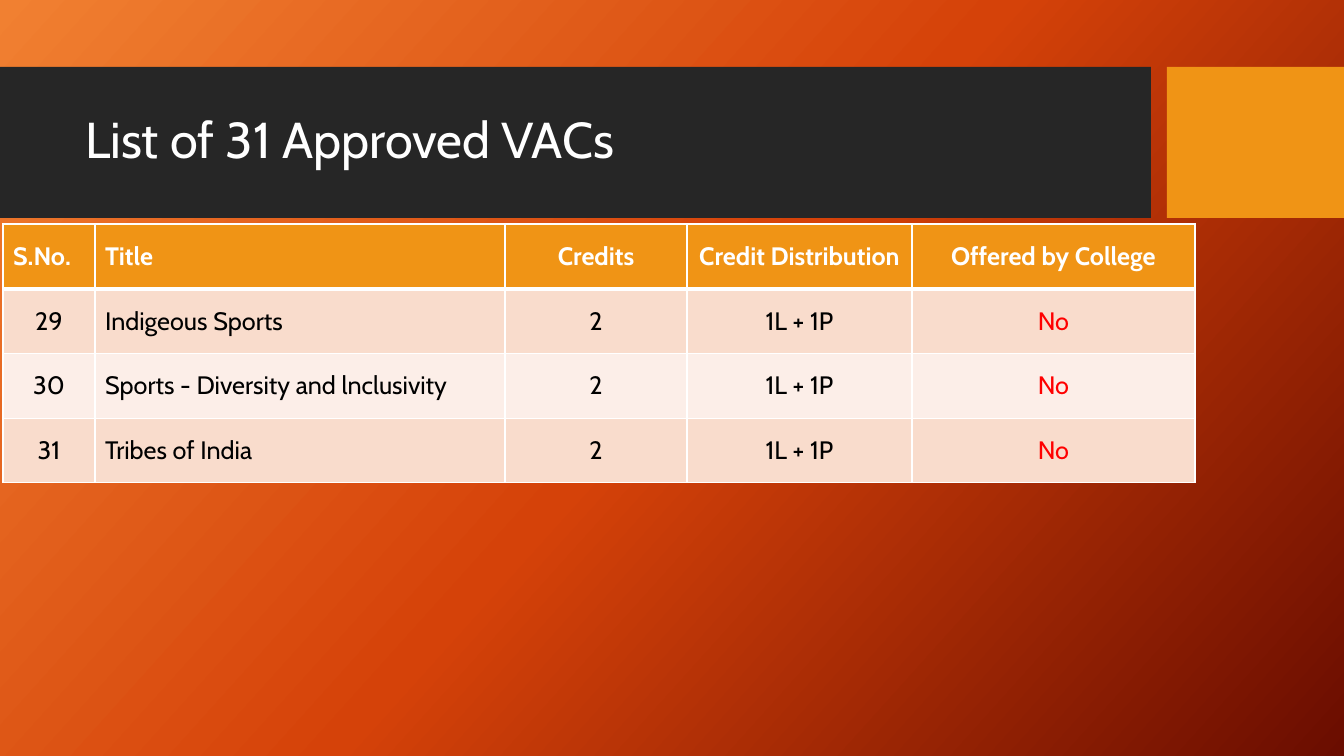
from dataclasses import dataclass

import pptx
import pptx.dml.color
import pptx.enum.shapes
import pptx.enum.text
import pptx.oxml
import pptx.oxml.ns
import pptx.util
from lxml import etree

EMU_PER_PX = 914400 / 100.8
FONT = "Cabin"
COLOURS = {
    "white": "FFFFFF",
    "black": "000000",
    "red": "FF0000",
    "charcoal": "262626",
    "amber": "F09415",
    "peach": "F9DCCC",
    "pale": "FCEEE8",
}
BACKDROP_STOPS = {0: "F18031", 50: "D54209", 100: "6A0D00"}
BACKDROP_ANGLE = 42  # clockwise

LEFT = pptx.enum.text.PP_ALIGN.LEFT
CENTER = pptx.enum.text.PP_ALIGN.CENTER
MIDDLE = pptx.enum.text.MSO_ANCHOR.MIDDLE


@dataclass
class Band:
    left: int
    width: int
    colour: str


@dataclass
class Column:
    heading: str
    width: int
    heading_align: int = CENTER
    align: int = CENTER
    colour: str = "black"


BAND_TOP, BAND_HEIGHT = 67, 151
BANDS = [Band(0, 1151, "charcoal"), Band(1167, 177, "amber")]
COLUMNS = [
    Column("S.No.", 92, heading_align=LEFT),
    Column("Title", 410, heading_align=LEFT, align=LEFT),
    Column("Credits", 182),
    Column("Credit Distribution", 225),
    Column("Offered by College", 283, colour="red"),
]
COURSES = [
    ("29", "Indigeous Sports", "2", "1L + 1P", "No"),
    ("30", "Sports - Diversity and lnclusivity", "2", "1L + 1P", "No"),
    ("31", "Tribes of India", "2", "1L + 1P", "No"),
]
TABLE_LEFT, TABLE_TOP, TABLE_HEIGHT = 3, 224, 259


def px(length: float) -> int:
    return round(length * EMU_PER_PX)


def rgb(name: str) -> pptx.dml.color.RGBColor:
    return pptx.dml.color.RGBColor.from_string(COLOURS[name])


def write(paragraph, text: str, size: int, colour: str, align: int, bold: bool = False) -> None:
    paragraph.alignment = align
    run = paragraph.add_run()
    run.text = text
    run.font.name = FONT
    run.font.size = pptx.util.Pt(size)
    run.font.bold = bold
    run.font.color.rgb = rgb(colour)


def paint_backdrop(slide) -> None:
    fill = slide.background.fill
    fill.gradient()
    fill.gradient_angle = 360 - BACKDROP_ANGLE
    stops = next(slide.element.iter(pptx.oxml.ns.qn("a:gsLst")))
    for stop in list(stops):
        stops.remove(stop)
    for percent, colour in BACKDROP_STOPS.items():
        stop = etree.SubElement(stops, pptx.oxml.ns.qn("a:gs"), pos=str(percent * 1000))
        etree.SubElement(stop, pptx.oxml.ns.qn("a:srgbClr"), val=colour)


def draw_band(slide, band: Band) -> None:
    shape = slide.shapes.add_shape(
        pptx.enum.shapes.MSO_SHAPE.RECTANGLE,
        px(band.left), px(BAND_TOP), px(band.width), px(BAND_HEIGHT))
    shape.shadow.inherit = False
    shape.fill.solid()
    shape.fill.fore_color.rgb = rgb(band.colour)
    shape.line.fill.background()


def set_borders(cell, bottom: int) -> None:
    properties = cell._tc.get_or_add_tcPr()
    widths = {"a:lnL": 1, "a:lnR": 1, "a:lnT": 1, "a:lnB": bottom}
    for position, (tag, points) in enumerate(widths.items()):
        line = etree.Element(pptx.oxml.ns.qn(tag), w=str(pptx.util.Pt(points)))
        solid = etree.SubElement(line, pptx.oxml.ns.qn("a:solidFill"))
        etree.SubElement(solid, pptx.oxml.ns.qn("a:srgbClr"), val=COLOURS["white"])
        properties.insert(position, line)


def fill_cell(cell, text: str, fill: str, colour: str, align: int, is_heading: bool) -> None:
    cell.vertical_anchor = MIDDLE
    cell.fill.solid()
    cell.fill.fore_color.rgb = rgb(fill)
    set_borders(cell, bottom=3 if is_heading else 1)
    write(cell.text_frame.paragraphs[0], text, 18, colour, align, bold=is_heading)


def draw_courses(slide) -> None:
    row_count = len(COURSES) + 1
    table = slide.shapes.add_table(
        row_count, len(COLUMNS), px(TABLE_LEFT), px(TABLE_TOP),
        px(sum(column.width for column in COLUMNS)), px(TABLE_HEIGHT)).table
    for row in table.rows:
        row.height = px(TABLE_HEIGHT / row_count)
    for c, column in enumerate(COLUMNS):
        table.columns[c].width = px(column.width)
        fill_cell(table.cell(0, c), column.heading, "amber", "white", column.heading_align, True)
        for r, course in enumerate(COURSES, start=1):
            fill = "peach" if r % 2 else "pale"
            fill_cell(table.cell(r, c), course[c], fill, column.colour, column.align, False)


def main() -> None:
    deck = pptx.Presentation()
    deck.slide_width, deck.slide_height = px(1344), px(756)
    slide = deck.slides.add_slide(deck.slide_layouts[5])

    # Backdrop and header bands
    paint_backdrop(slide)
    for band in BANDS:
        draw_band(slide, band)

    # Title, in front of the bands
    title = slide.shapes.title
    title.left, title.top, title.width, title.height = px(75), px(83), px(1059), px(119)
    title.text_frame.vertical_anchor = MIDDLE
    heading = title.text_frame.paragraphs[0]
    heading.line_spacing = 0.9
    write(heading, "List of 31 Approved VACs", 36, "white", LEFT)
    slide.shapes.element.append(title.element)

    # Course table
    draw_courses(slide)

    deck.save("out.pptx")


if __name__ == "__main__":
    main()
